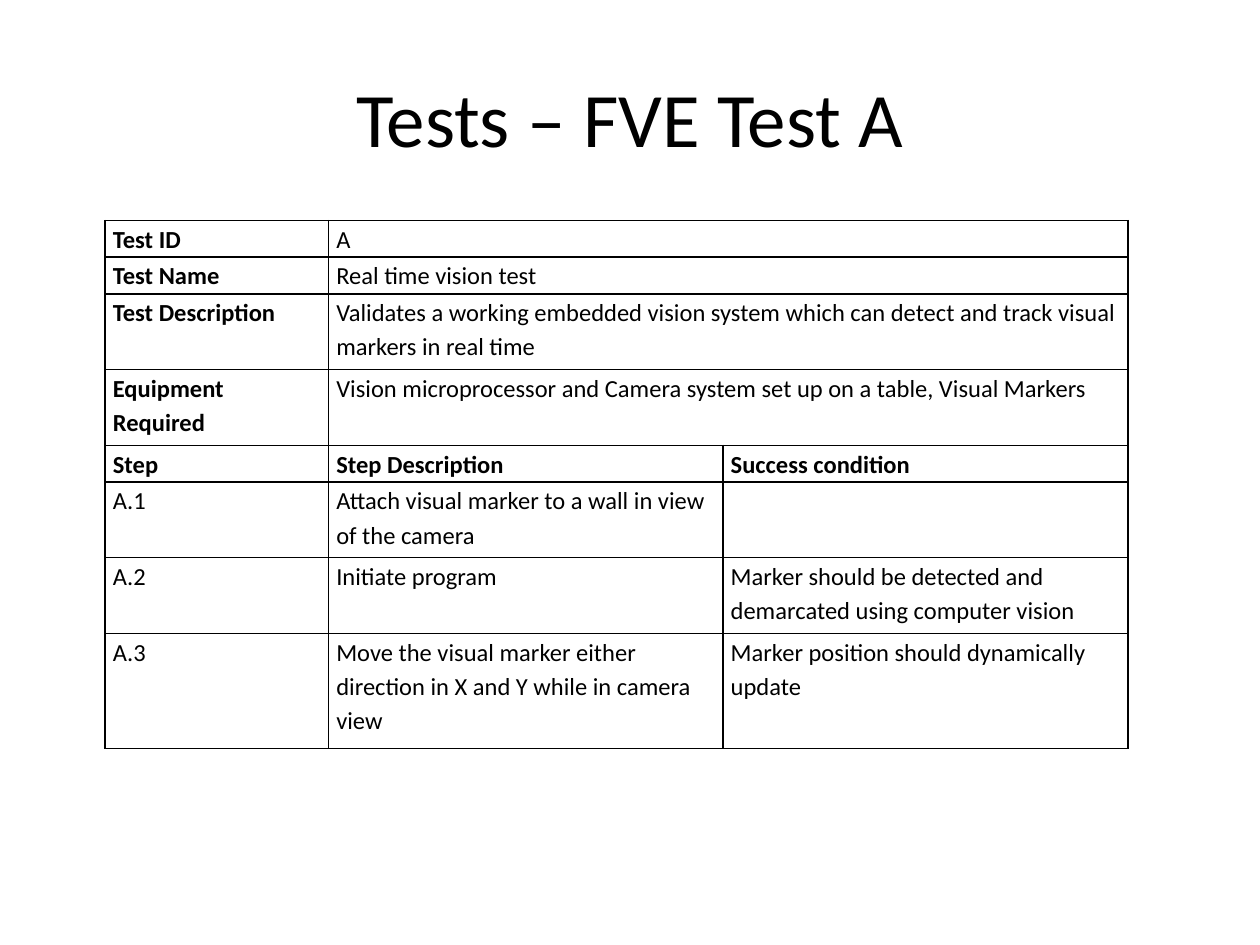
"""Build the slide that describes FVE Test A as a table of details and steps."""
from dataclasses import dataclass

from lxml.etree import SubElement
from pptx import Presentation
from pptx.dml.color import RGBColor
from pptx.enum.text import MSO_ANCHOR, PP_ALIGN
from pptx.oxml.ns import qn
from pptx.util import Pt

TITLE = "Tests – FVE Test A"
DETAILS = [
    ("Test ID", "A", 1),
    ("Test Name", "Real time vision test", 1),
    ("Test Description", "Validates a working embedded vision system which can "
     "detect and track visual markers in real time", 2),
    ("Equipment Required", "Vision microprocessor and Camera system set up on a "
     "table, Visual Markers", 2),
]
STEP_HEADINGS = ("Step", "Step Description", "Success condition")
STEPS = [
    ("A.1", "Attach visual marker to a wall in view of the camera", "", 2),
    ("A.2", "Initiate program",
     "Marker should be detected and demarcated using computer vision", 2),
    ("A.3", "Move the visual marker either direction in X and Y while in camera view",
     "Marker position should dynamically update", 3),
]
COLUMN_WIDTHS = (127.7, 225.4, 231.4)
TABLE_LEFT, TABLE_TOP = 60, 126
LINE_PITCH, ROW_TRIM = 22.35, 1.4


@dataclass(frozen=True)
class Theme:
    font: str = "Calibri"
    ink: str = "000000"
    paper: str = "FFFFFF"
    title_size: int = 44
    table_size: int = 14
    line_spacing: float = 1.15
    cell_margin: float = 4.5
    border: int = 1


THEME = Theme()


def add_words(paragraph, words, size, bold=False):
    run = paragraph.add_run()
    run.text = words
    run.font.name = THEME.font
    run.font.size = Pt(size)
    run.font.bold = bold
    run.font.color.rgb = RGBColor.from_string(THEME.ink)


def add_borders(cell):
    properties = cell._tc.get_or_add_tcPr()
    for position, side in enumerate(("lnL", "lnR", "lnT", "lnB")):
        border = properties.makeelement(qn(f"a:{side}"), {"w": str(Pt(THEME.border))})
        ink = SubElement(SubElement(border, qn("a:solidFill")), qn("a:srgbClr"))
        ink.set("val", THEME.ink)
        properties.insert(position, border)


def fill_cell(cell, words, bold):
    cell.margin_left = cell.margin_right = Pt(THEME.cell_margin)
    cell.margin_top = cell.margin_bottom = Pt(0)
    cell.fill.solid()
    cell.fill.fore_color.rgb = RGBColor.from_string(THEME.paper)
    add_borders(cell)
    paragraph = cell.text_frame.paragraphs[0]
    paragraph.line_spacing = THEME.line_spacing
    if words:
        add_words(paragraph, words, THEME.table_size, bold)


def add_title(slide):
    title = slide.shapes.title
    title.left, title.top, title.width, title.height = Pt(36), Pt(21.6), Pt(648), Pt(90)
    title.text_frame.vertical_anchor = MSO_ANCHOR.MIDDLE
    heading = title.text_frame.paragraphs[0]
    heading.alignment = PP_ALIGN.CENTER
    add_words(heading, TITLE, THEME.title_size)


def add_test_table(slide):
    rows = [((label, detail, ""), (True, False, False), lines)
            for label, detail, lines in DETAILS]
    rows.append((STEP_HEADINGS, (True, True, True), 1))
    rows += [(step, (False, False, False), lines) for *step, lines in STEPS]
    heights = [lines * LINE_PITCH - ROW_TRIM for _, _, lines in rows]

    table = slide.shapes.add_table(
        len(rows), len(COLUMN_WIDTHS), Pt(TABLE_LEFT), Pt(TABLE_TOP),
        Pt(sum(COLUMN_WIDTHS)), Pt(sum(heights))).table
    table.first_row = table.horz_banding = False
    for column, width in zip(table.columns, COLUMN_WIDTHS):
        column.width = Pt(width)
    for index, ((texts, bolds, _), height) in enumerate(zip(rows, heights)):
        table.rows[index].height = Pt(height)
        for column, (words, bold) in enumerate(zip(texts, bolds)):
            fill_cell(table.cell(index, column), words, bold)
        if index < len(DETAILS):
            table.cell(index, 1).merge(table.cell(index, 2))


def main():
    deck = Presentation()
    deck.slide_width, deck.slide_height = Pt(720), Pt(540)
    slide = deck.slides.add_slide(deck.slide_layouts[5])
    add_title(slide)
    add_test_table(slide)
    deck.save("out.pptx")


if __name__ == "__main__":
    main()
